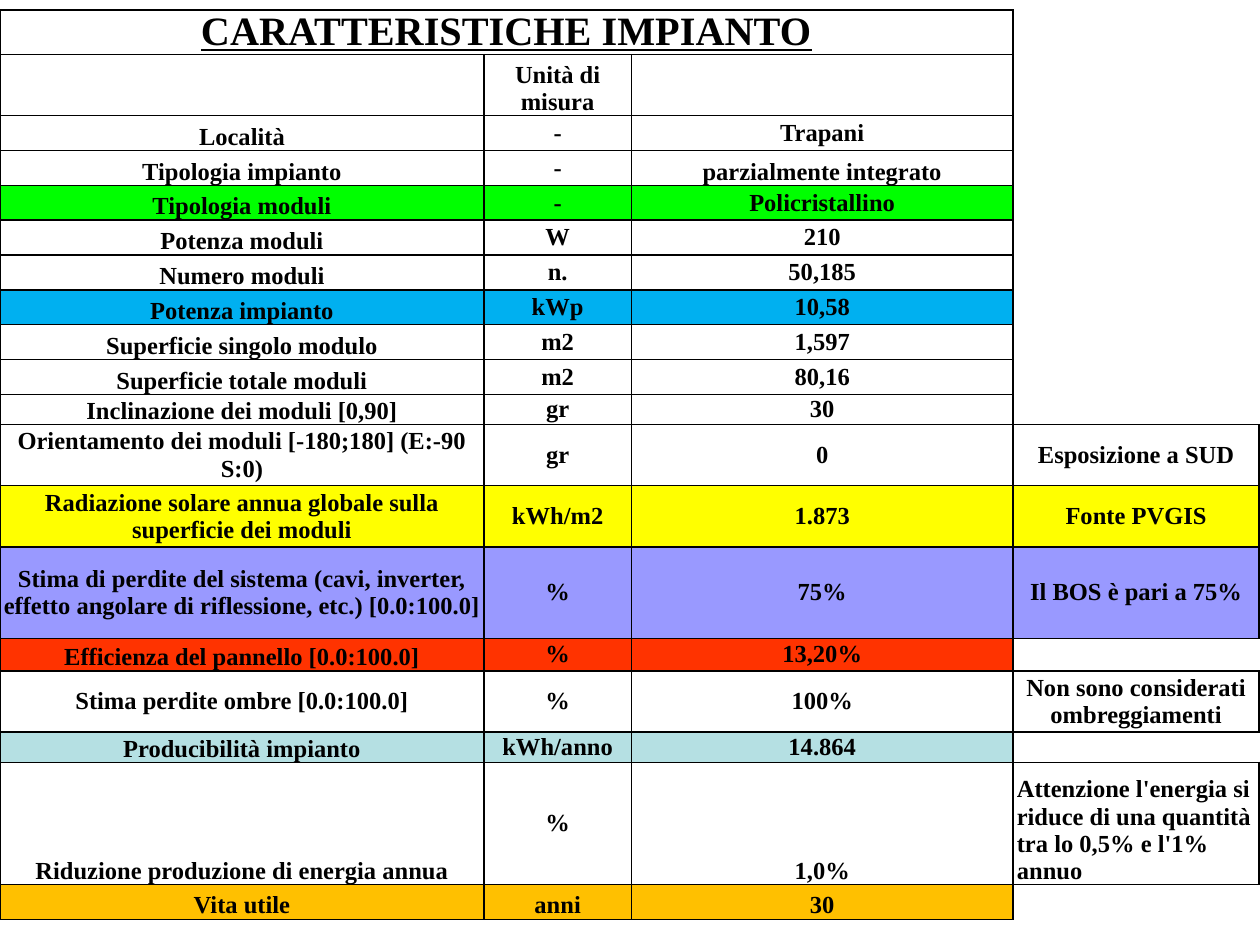
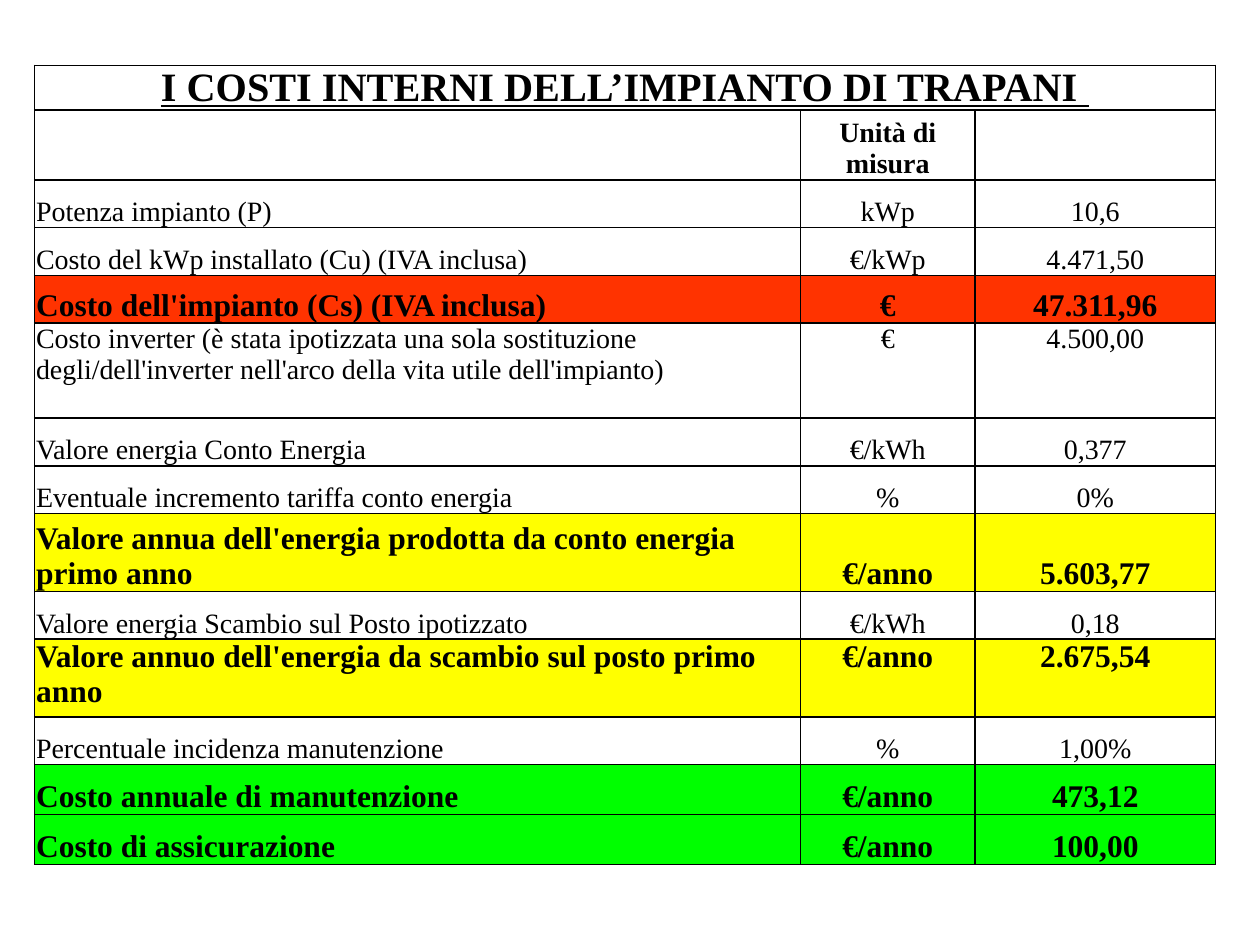
"""Builds two slides of tables: the features and the internal costs of a solar plant."""
from dataclasses import dataclass

from lxml import etree
from pptx import Presentation, util as u
from pptx.dml import color
from pptx.enum import text
from pptx.oxml import ns


@dataclass
class Theme:
    font: str = "Times New Roman"
    ink: str = "000000"
    white: str = "FFFFFF"
    green: str = "00FF00"
    blue: str = "00B0F0"
    yellow: str = "FFFF00"
    violet: str = "9999FF"
    red: str = "FF3300"
    teal: str = "B5E0E3"
    amber: str = "FFC000"
    title: float = 23
    features: float = 14
    costs: float = 16
    strong: float = 18
    border: float = 1


@dataclass
class Line:
    height: float
    cells: tuple
    fill: str = ""
    anchors: str = "bmmm"
    aligns: str = "cccc"
    size: float = 14
    bold: bool = True
    underline: bool = False


theme = Theme()
ANCHORS = {"t": text.MSO_ANCHOR.TOP, "m": text.MSO_ANCHOR.MIDDLE, "b": text.MSO_ANCHOR.BOTTOM}
ALIGNS = {"l": text.PP_ALIGN.LEFT, "c": text.PP_ALIGN.CENTER}


def set_borders(cell, drawn):
    """Draw the named sides of a cell and clear the others."""
    properties = cell._tc.get_or_add_tcPr()
    for side in "LRTB":
        edge = etree.SubElement(properties, ns.qn(f"a:ln{side}"), w=str(u.Pt(theme.border)))
        if side in drawn:
            paint = etree.SubElement(edge, ns.qn("a:solidFill"))
            etree.SubElement(paint, ns.qn("a:srgbClr"), val=theme.ink)
        else:
            etree.SubElement(edge, ns.qn("a:noFill"))


def cost(height, *cells, fill="", anchor="b"):
    """Describe a cost line; coloured lines are larger and bold."""
    size = theme.strong if fill else theme.costs
    return Line(height, cells, fill, anchor * 3, "lcc", size, bool(fill))


features = [
    Line(25.2, ("CARATTERISTICHE IMPIANTO",), theme.white, size=theme.title, underline=True),
    Line(34.9, ("", "Unità di misura", ""), anchors="bbb"),
    Line(19.9, ("Località", "-", "Trapani")),
    Line(19.9, ("Tipologia impianto", "-", "parzialmente integrato"), anchors="bmb"),
    Line(19.9, ("Tipologia moduli", "-", "Policristallino"), theme.green),
    Line(19.9, ("Potenza moduli", "W", "210")),
    Line(19.9, ("Numero moduli", "n.", "50,185")),
    Line(19.9, ("Potenza impianto", "kWp", "10,58"), theme.blue),
    Line(19.9, ("Superficie singolo modulo", "m2", "1,597")),
    Line(19.9, ("Superficie totale moduli", "m2", "80,16")),
    Line(17.4, ("Inclinazione dei moduli [0,90]", "gr", "30")),
    Line(34.9, ("Orientamento dei moduli [-180;180] (E:-90 S:0)", "gr", "0",
                "Esposizione a SUD"), anchors="mmmm"),
    Line(34.9, ("Radiazione solare annua globale sulla superficie dei moduli", "kWh/m2", "1.873",
                "Fonte PVGIS"), theme.yellow, "mmmm"),
    Line(52.4, ("Stima di perdite del sistema (cavi, inverter, effetto angolare di riflessione, "
                "etc.) [0.0:100.0]", "%", "75%", "Il BOS è pari a 75%"), theme.violet, "mmmm"),
    Line(18.5, ("Efficienza del pannello [0.0:100.0]", "%", "13,20%"), theme.red),
    Line(34.9, ("Stima perdite ombre [0.0:100.0]", "%", "100%",
                "Non sono considerati ombreggiamenti"), anchors="mmmm"),
    Line(17.4, ("Producibilità impianto", "kWh/anno", "14.864"), theme.teal),
    Line(69.8, ("Riduzione produzione di energia annua", "%", "1,0%",
                "Attenzione l'energia si riduce di una quantità tra lo 0,5% e l'1% annuo"),
         anchors="bmbb", aligns="cccl"),
    Line(19.9, ("Vita utile", "anni", "30"), theme.amber, "bbb"),
]

costs = [
    Line(25.5, ("I COSTI INTERNI DELL’IMPIANTO DI TRAPANI ",), theme.white,
         size=theme.title, underline=True),
    Line(39.8, ("", "Unità di misura", ""), anchors="bbb", size=theme.costs),
    cost(27.3, "Potenza impianto (P)", "kWp", "10,6"),
    cost(27.3, "Costo del kWp installato (Cu) (IVA inclusa)", "€/kWp", "4.471,50"),
    cost(27.3, "Costo dell'impianto (Cs) (IVA inclusa)", "€", "47.311,96", fill=theme.red),
    cost(54.3, "Costo inverter (è stata ipotizzata una sola sostituzione degli/dell'inverter "
         "nell'arco della vita utile dell'impianto)", "€", "4.500,00", anchor="t"),
    cost(27.3, "Valore energia Conto Energia", "€/kWh", "0,377"),
    cost(27.3, "Eventuale incremento tariffa conto energia", "%", "0%"),
    cost(44.4, "Valore annua dell'energia prodotta da conto energia primo anno", "€/anno",
         "5.603,77", fill=theme.yellow),
    cost(27.3, "Valore energia Scambio sul Posto ipotizzato", "€/kWh", "0,18"),
    cost(44.4, "Valore annuo dell'energia da scambio sul posto primo anno", "€/anno",
         "2.675,54", fill=theme.yellow, anchor="t"),
    cost(27.3, "Percentuale incidenza manutenzione", "%", "1,00%"),
    cost(28.6, "Costo annuale di manutenzione", "€/anno", "473,12", fill=theme.green),
    cost(28.6, "Costo di assicurazione", "€/anno", "100,00", fill=theme.green),
]

pages = [
    (0, 5.6, (276.6, 84.2, 218.2, 140.6), 2.1, features),
    (19.8, 37.4, (437.6, 99.8, 137.4), 0.8, costs),
]

deck = Presentation()
deck.slide_width, deck.slide_height = u.Pt(720), u.Pt(540)

for left, top, widths, inset, lines in pages:
    page = deck.slides.add_slide(deck.slide_layouts[6])
    frame = page.shapes.add_table(len(lines), len(widths), u.Pt(left), u.Pt(top),
                                  u.Pt(sum(widths)), u.Pt(sum(line.height for line in lines)))
    table = frame.table
    table.first_row = table.horz_banding = False
    for column, width in zip(table.columns, widths):
        column.width = u.Pt(width)
    table.cell(0, 0).merge(table.cell(0, 2))
    noted = [len(line.cells) == 4 for line in lines]

    for row, line in enumerate(lines):
        table.rows[row].height = u.Pt(line.height)
        for column in range(len(widths)):
            cell = table.cell(row, column)
            drawn = "LRTB"
            if column == 3 and not noted[row]:
                above = "T" if row > 0 and noted[row - 1] else ""
                below = "B" if row + 1 < len(lines) and noted[row + 1] else ""
                drawn = "L" + above + below
            set_borders(cell, drawn)
            if line.fill and (column < 3 or noted[row]):
                cell.fill.solid()
                cell.fill.fore_color.rgb = color.RGBColor.from_string(line.fill)
            else:
                cell.fill.background()
            cell.margin_left = cell.margin_right = u.Pt(inset)
            cell.margin_top = cell.margin_bottom = 0

            para = cell.text_frame.paragraphs[0]
            words = line.cells[column] if column < len(line.cells) else ""
            if not words:
                etree.SubElement(para._p, ns.qn("a:endParaRPr"), sz=str(theme.features * 100))
                continue
            para.text = words
            para.alignment = ALIGNS[line.aligns[column]]
            cell.vertical_anchor = ANCHORS[line.anchors[column]]
            for span in para.runs:
                span.font.name = theme.font
                span.font.size = u.Pt(line.size)
                span.font.bold = line.bold
                span.font.underline = line.underline
                span.font.color.rgb = color.RGBColor.from_string(theme.ink)

deck.save("out.pptx")
